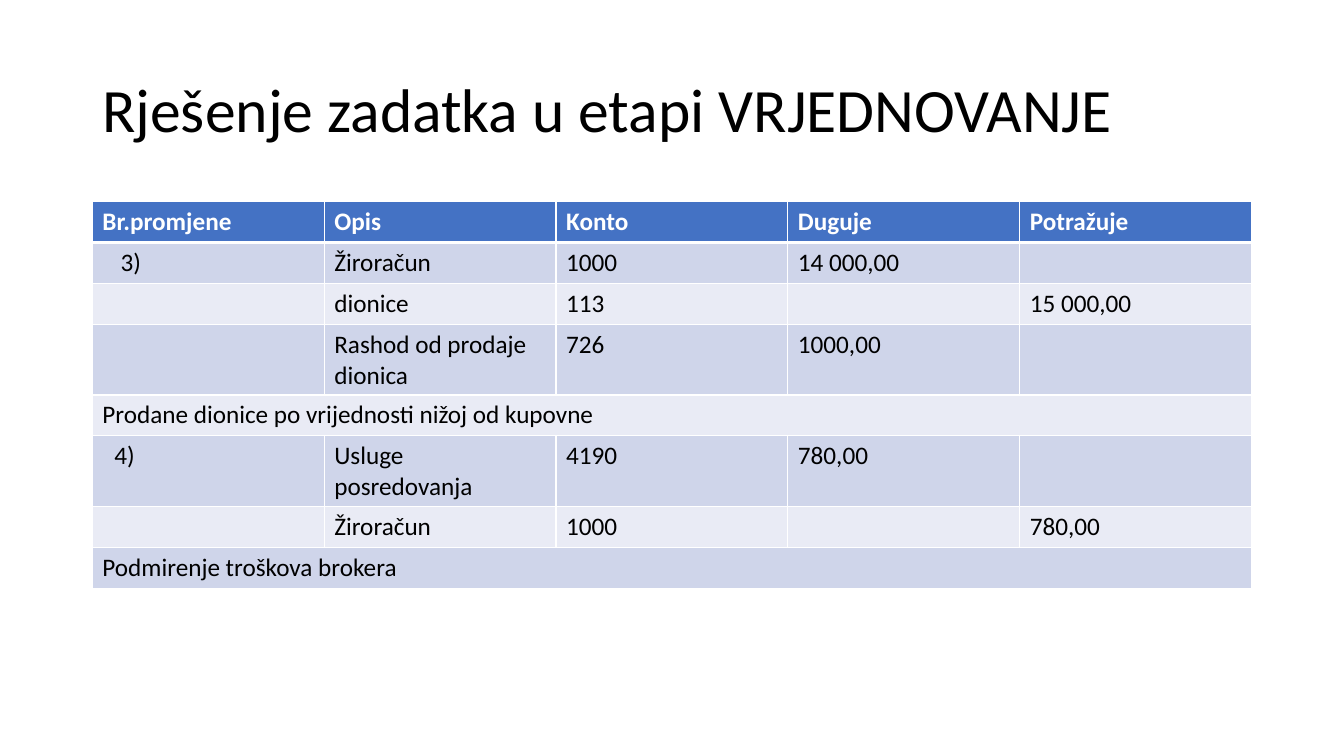
from lxml import etree
from pptx import Presentation
from pptx.dml.color import RGBColor
from pptx.enum.text import MSO_ANCHOR
from pptx.oxml.ns import qn
from pptx.util import Pt

MIDDLE = MSO_ANCHOR.MIDDLE
PX = 9525
COLORS = {"text": "000000", "white": "FFFFFF", "header": "4472C4",
          "odd": "CFD5EA", "even": "E9EBF5"}
HEADER = ["Br.promjene", "Opis", "Konto", "Duguje", "Potražuje"]
ENTRIES = [
    ["3)", "Žiroračun", "1000", "14 000,00", ""],
    ["", "dionice", "113", "", "15 000,00"],
    ["", "Rashod od prodaje dionica", "726", "1000,00", ""],
    ["Prodane dionice po vrijednosti nižoj od kupovne"],
    ["4)", "Usluge posredovanja", "4190", "780,00", ""],
    ["", "Žiroračun", "1000", "", "780,00"],
    ["Podmirenje troškova brokera"],
]
NUMBER_MARGINS = {"3)": 27, "4)": 21}


class SlideBuilder:
    """Holds the style and the current slide, and adds elements to it."""

    def __init__(self, prs, font="Calibri"):
        self.font = font
        self.slide = prs.slides.add_slide(prs.slide_layouts[6])

    def add_text(self, tf, text, size, color="text", bold=False):
        p = tf.paragraphs[0]
        r = p.add_run()
        r.text = text
        style = {"name": self.font, "size": Pt(size), "bold": bold}
        for key, value in style.items():
            setattr(r.font, key, value)
        r.font.color.rgb = RGBColor.from_string(COLORS[color])
        return p

    def title(self, box, text, size):
        tf = self.slide.shapes.add_textbox(*(v * PX for v in box)).text_frame
        tf.word_wrap = True
        tf.vertical_anchor = MIDDLE
        self.add_text(tf, text, size).line_spacing = 0.9

    def borders(self, cell, widths):
        tc_pr = cell._tc.get_or_add_tcPr()
        for side, width in widths.items():
            ln = etree.SubElement(tc_pr, qn(f"a:ln{side}"), w=str(Pt(width)))
            fill = etree.SubElement(ln, qn("a:solidFill"))
            etree.SubElement(fill, qn("a:srgbClr"), val=COLORS["white"])

    def table(self, box, header, entries, size):
        rows = [header] + entries
        table = self.slide.shapes.add_table(
            len(rows), len(header), *(v * PX for v in box)).table
        for i, row in enumerate(rows):
            fill = "header" if i == 0 else ("even", "odd")[i % 2]
            for j in range(len(header)):
                cell = table.cell(i, j)
                self.borders(cell, {"L": 1, "R": 1, "T": 3 if i == 1 else 1,
                                    "B": 3 if i == 0 else 1})
                cell.fill.solid()
                cell.fill.fore_color.rgb = RGBColor.from_string(COLORS[fill])
            for j, text in enumerate(row):
                cell = table.cell(i, j)
                if text in NUMBER_MARGINS:
                    cell.margin_left = NUMBER_MARGINS[text] * PX
                if text:
                    self.add_text(cell.text_frame, text, size,
                                  "text" if i else "white", i == 0)
            if len(row) == 1:
                table.cell(i, 0).merge(table.cell(i, len(header) - 1))


def main():
    prs = Presentation()
    prs.slide_width, prs.slide_height = 1280 * PX, 720 * PX
    s = SlideBuilder(prs)
    s.title((88, 38, 1104, 139), "Rješenje zadatka u etapi VRJEDNOVANJE", 44)
    s.table((88, 192, 1104, 312), HEADER, ENTRIES, 18)
    prs.save("out.pptx")


if __name__ == "__main__":
    main()
